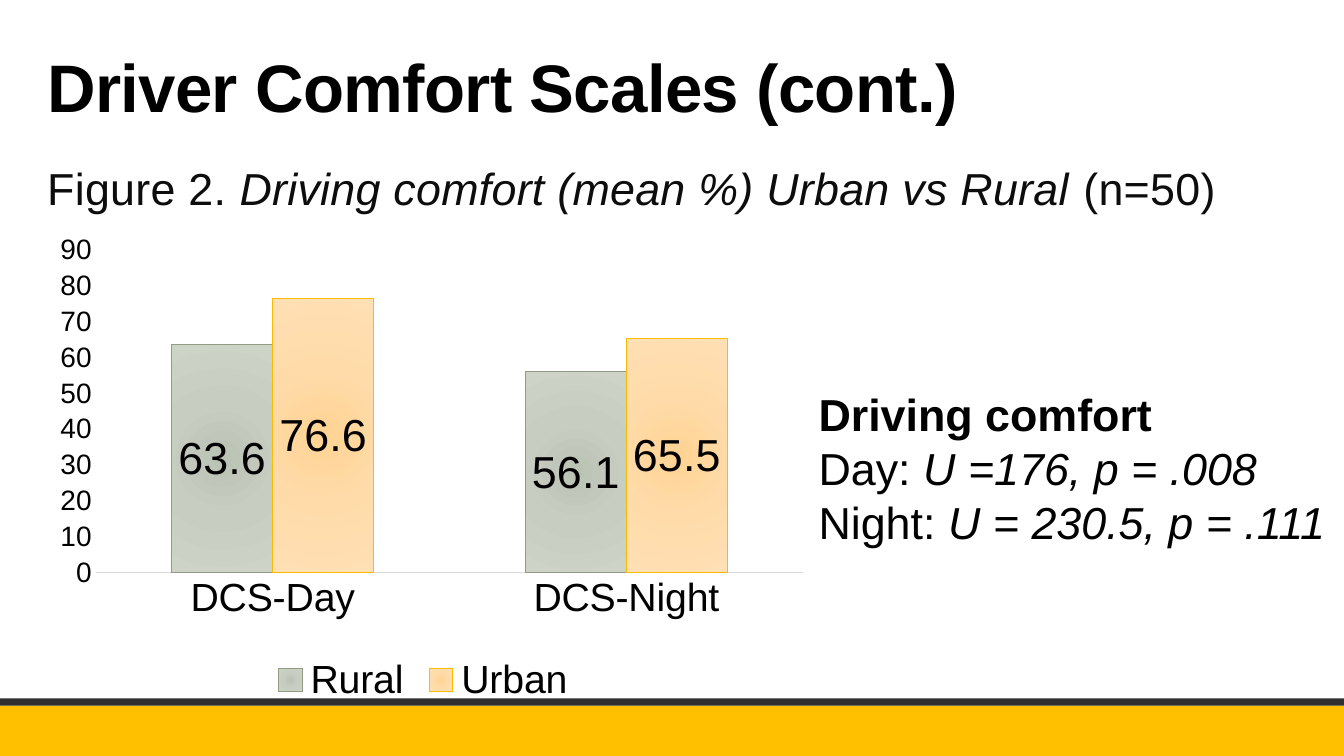
from lxml import etree
from pptx import Presentation
from pptx.chart.data import CategoryChartData
from pptx.dml.color import RGBColor
from pptx.enum import chart as ch, shapes, text
from pptx.oxml import parse_xml
from pptx.oxml.ns import nsdecls, qn
from pptx.util import Inches, Pt

BLACK = RGBColor(0, 0, 0)
INK = RGBColor(0x0D, 0x0D, 0x0D)
GOLD = RGBColor(0xFF, 0xC0, 0x00)
CHARCOAL = RGBColor(0x2F, 0x2F, 0x2F)
AXIS_GREY = RGBColor(0xD9, 0xD9, 0xD9)
SAGE_LINE = RGBColor(0x91, 0x9C, 0x85)
AMBER_LINE = RGBColor(0xF9, 0xBC, 0x00)
SAGE = [RGBColor(0xBB, 0xC3, 0xB5), RGBColor(0xC7, 0xCD, 0xC1), RGBColor(0xCD, 0xD4, 0xC7)]
AMBER = [RGBColor(0xFF, 0xD3, 0x93), RGBColor(0xFF, 0xDB, 0xA9), RGBColor(0xFF, 0xDF, 0xB4)]


def box(left, top, width, height):
    return [Inches(v) for v in (left, top, width, height)]


def style_font(font, size, color=BLACK, bold=False, italic=False):
    font.name = "Arial"
    font.size = Pt(size)
    font.color.rgb = color
    font.bold = bold
    font.italic = italic


def set_spacing(run, points):
    """Set the letter spacing of a run."""
    run._r.get_or_add_rPr().set("spc", str(int(points * 100)))


def add_band(slide, top, height, color):
    sp = slide.shapes.add_shape(shapes.MSO_SHAPE.RECTANGLE, *box(0, top, 13.33, height))
    sp.shadow.inherit = False
    sp.fill.solid()
    sp.fill.fore_color.rgb = color
    sp.line.fill.background()


def format_title(slide, title):
    sp = slide.shapes.title
    sp.left, sp.top, sp.width, sp.height = box(0.37, 0.33, 11, 0.97)
    tf = sp.text_frame
    tf.text = title
    tf.auto_size = text.MSO_AUTO_SIZE.NONE
    tf.vertical_anchor = text.MSO_ANCHOR.BOTTOM
    p = tf.paragraphs[0]
    p.alignment = text.PP_ALIGN.LEFT
    p.line_spacing = 0.85
    style_font(p.runs[0].font, 48, bold=True)
    set_spacing(p.runs[0], -0.5)


def add_text(slide, place, lines, color=BLACK, spacing=0):
    """Add lines, each a list of (words, style) runs; style is "", "b" or "i"."""
    tf = slide.shapes.add_textbox(*box(*place)).text_frame
    tf.word_wrap = True
    for i, line in enumerate(lines):
        p = tf.add_paragraph() if i else tf.paragraphs[0]
        for words, style in line:
            r = p.add_run()
            r.text = words
            style_font(r.font, 32, color, style == "b", style == "i")
            if spacing:
                set_spacing(r, spacing)


def fill_radial(series, colors):
    stops = "".join(
        f'<a:gs pos="{pos * 1000}"><a:srgbClr val="{color}"/></a:gs>'
        for pos, color in zip((0, 45, 100), colors))
    grad = parse_xml(
        f'<a:gradFill {nsdecls("a")} rotWithShape="1"><a:gsLst>{stops}</a:gsLst>'
        '<a:path path="circle"><a:fillToRect l="100000" t="100000" r="100000" b="100000"/>'
        '</a:path></a:gradFill>')
    series.format.fill.solid()
    props = series._element.find(qn("c:spPr"))
    props.replace(props.find(qn("a:solidFill")), grad)


def set_plot_area(chart, left, top, width, height):
    """Place the inner plot area, in fractions of the chart."""
    area = chart._chartSpace.chart.plotArea
    for old in area.findall(qn("c:layout")):
        area.remove(old)
    layout = etree.Element(qn("c:layout"))
    manual = etree.SubElement(layout, qn("c:manualLayout"))
    for tag, val in (("layoutTarget", "inner"), ("xMode", "edge"), ("yMode", "edge"),
                     ("x", left), ("y", top), ("w", width), ("h", height)):
        etree.SubElement(manual, qn("c:" + tag)).set("val", str(val))
    area.insert(0, layout)


def format_axes(chart):
    for axis, size in ((chart.category_axis, 28), (chart.value_axis, 20)):
        axis.has_major_gridlines = False
        axis.major_tick_mark = axis.minor_tick_mark = ch.XL_TICK_MARK.NONE
        style_font(axis.tick_labels.font, size)
    line = chart.category_axis.format.line
    line.color.rgb = AXIS_GREY
    line.width = Pt(0.75)
    values = chart.value_axis
    values.format.line.fill.background()
    values.minimum_scale, values.maximum_scale, values.major_unit = 0, 90, 10


def add_comfort_chart(slide):
    data = CategoryChartData()
    data.categories = ["DCS-Day", "DCS-Night"]
    data.add_series("Rural", (63.6, 56.1))
    data.add_series("Urban", (76.6, 65.5))
    chart = slide.shapes.add_chart(
        ch.XL_CHART_TYPE.COLUMN_CLUSTERED, *box(0.37, 2.26, 7.65, 4.78), data).chart
    chart.has_title = False
    style_font(chart.font, 10)
    chart.has_legend = True
    chart.legend.position = ch.XL_LEGEND_POSITION.BOTTOM
    chart.legend.include_in_layout = False
    style_font(chart.legend.font, 28)
    format_axes(chart)
    set_plot_area(chart, 0.076, 0.047, 0.917, 0.669)

    plot = chart.plots[0]
    plot.gap_width = 150
    plot.overlap = 0
    plot.vary_by_categories = False
    for series, colors, edge in zip(plot.series, (SAGE, AMBER), (SAGE_LINE, AMBER_LINE)):
        fill_radial(series, colors)
        series.format.line.color.rgb = edge
        series.format.line.width = Pt(0.75)
        labels = series.data_labels
        labels.show_value = True
        labels.position = ch.XL_LABEL_POSITION.CENTER
        style_font(labels.font, 32)


def main():
    prs = Presentation()
    prs.slide_width, prs.slide_height = Inches(13.33), Inches(7.5)
    slide = prs.slides.add_slide(prs.slide_layouts[5])
    add_band(slide, 7, 0.5, GOLD)
    add_band(slide, 6.93, 0.07, CHARCOAL)
    format_title(slide, "Driver Comfort Scales (cont.)")
    add_comfort_chart(slide)
    add_text(slide, (0.37, 1.55, 12.4, 0.64), [
        [("Figure 2. ", ""), ("Driving comfort (mean %) Urban vs Rural ", "i"), ("(n=50)", "")],
    ], INK, 0.2)
    add_text(slide, (8.02, 3.79, 5.53, 1.72), [
        [("Driving comfort", "b")],
        [("Day: ", ""), ("U =176, p = .008", "i")],
        [("Night: ", ""), ("U = 230.5, p = .111", "i")],
    ])
    prs.save("out.pptx")


if __name__ == "__main__":
    main()
